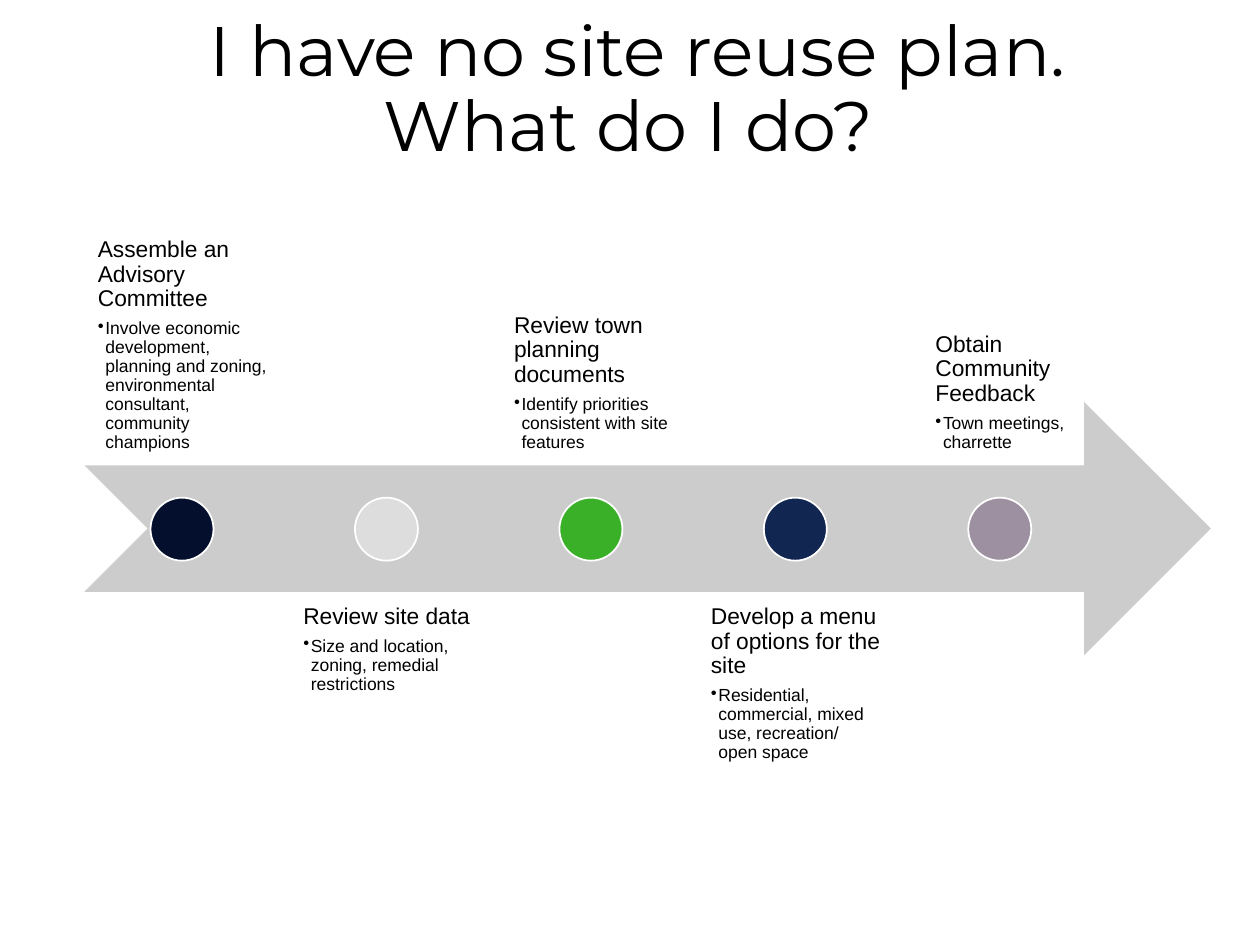
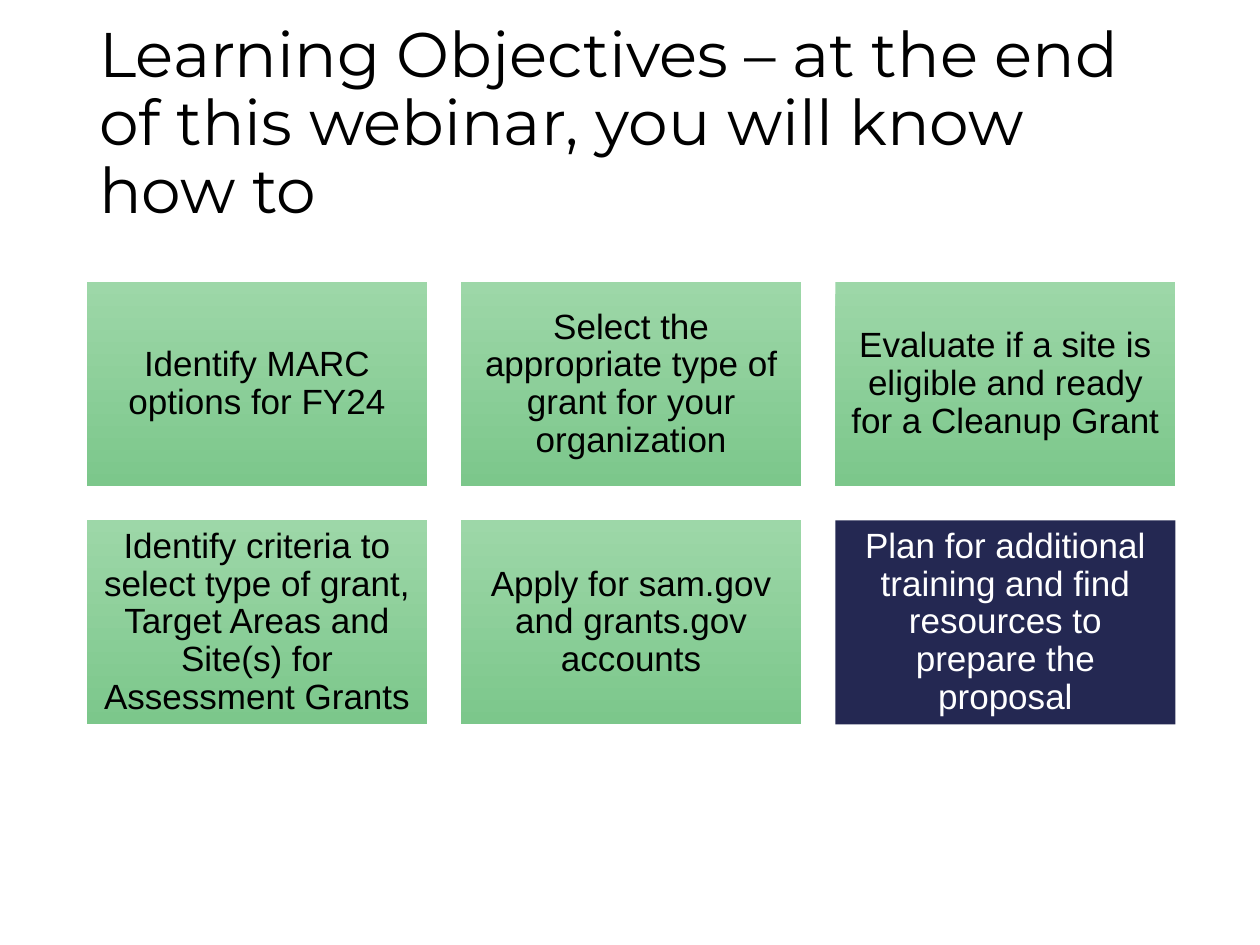
from lxml import etree
from pptx import Presentation
from pptx.dml.color import RGBColor
from pptx.enum.shapes import MSO_SHAPE
from pptx.enum.text import MSO_ANCHOR, PP_ALIGN
from pptx.oxml.ns import qn
from pptx.util import Inches, Pt

ARROW, DOT, CARD = MSO_SHAPE.NOTCHED_RIGHT_ARROW, MSO_SHAPE.OVAL, MSO_SHAPE.RECTANGLE
TOP, MIDDLE, BOTTOM = MSO_ANCHOR.TOP, MSO_ANCHOR.MIDDLE, MSO_ANCHOR.BOTTOM
LEFT, CENTER = PP_ALIGN.LEFT, PP_ALIGN.CENTER

# Shared style
TITLE_FONT, BODY_FONT = "Montserrat", "Arial"
BLACK, WHITE, GREY, NAVY = "000000", "FFFFFF", "CCCCCD", "242852"
GREEN_TOP, GREEN_BOTTOM = "9DD7A8", "7CC78B"
LINE_SPACING = 0.9
TITLE_WIDTH, TITLE_HEIGHT = 8.62, 1.45

# Timeline: heading, detail, dot colour; texts alternate above and below
STEPS = [
    ("Assemble an Advisory Committee",
     "Involve economic development, planning and zoning, environmental "
     "consultant, community champions", "040F2D"),
    ("Review site data",
     "Size and location, zoning, remedial restrictions", "DDDDDD"),
    ("Review town planning documents",
     "Identify priorities consistent with site features", "3AB028"),
    ("Develop a menu of options for the site",
     "Residential, commercial, mixed use, recreation/ open space", "122652"),
    ("Obtain Community Feedback", "Town meetings, charrette", "9D90A0"),
]
STEP_LEFT, STEP_WIDTH, STEP_HEIGHT = 0.67, 1.55, 2.01
STEP_PITCH = 6.49 / (len(STEPS) - 1)
ABOVE_TOP, BELOW_TOP = 1.68, 4.7
DOT_SIZE, DOT_TOP = 0.5, 3.95

# Objective cards, filled row by row; the last one stands out
OBJECTIVES = [
    "Identify MARC options for FY24",
    "Select the appropriate type of grant for your organization",
    "Evaluate if a site is eligible and ready for a Cleanup Grant",
    "Identify criteria to select type of grant, Target Areas and Site(s) "
    "for Assessment Grants",
    "Apply for sam.gov and grants.gov accounts",
    "Plan for additional training and find resources to prepare the proposal",
]
CARD_LEFT, CARD_TOP, CARD_WIDTH, CARD_HEIGHT = 0.69, 2.24, 2.7, 1.62
CARD_GAP, CARD_COLUMNS = 0.27, 3


def rgb(hex_color):
    return RGBColor.from_string(hex_color)


def set_frame(frame, anchor, inset=None):
    frame.word_wrap = True
    frame.vertical_anchor = anchor
    if inset is not None:
        frame.margin_left = frame.margin_right = Inches(inset)
        frame.margin_top = frame.margin_bottom = Inches(inset)


def write(para, text, size, color=BLACK, font=BODY_FONT, align=LEFT, after=0):
    para.alignment = align
    para.line_spacing = LINE_SPACING
    para.space_after = Pt(after)
    span = para.add_run()
    span.text = text
    span.font.name = font
    span.font.size = Pt(size)
    span.font.color.rgb = rgb(color)


def add_bullet(para, indent):
    properties = para._p.get_or_add_pPr()
    properties.set("marL", str(Inches(indent)))
    properties.set("indent", str(-Inches(indent)))
    etree.SubElement(properties, qn("a:buChar")).set("char", "•")


def add_text_box(page, left, top, width, height):
    return page.shapes.add_textbox(
        Inches(left), Inches(top), Inches(width), Inches(height))


def add_title(page, text, left, top, size, align):
    frame = add_text_box(page, left, top, TITLE_WIDTH, TITLE_HEIGHT).text_frame
    set_frame(frame, MIDDLE)
    write(frame.paragraphs[0], text, size, font=TITLE_FONT, align=align)


def add_shape(page, kind, left, top, width, height, fill=None, outline=None):
    shape = page.shapes.add_shape(
        kind, Inches(left), Inches(top), Inches(width), Inches(height))
    shape.shadow.inherit = False
    if fill:
        shape.fill.solid()
        shape.fill.fore_color.rgb = rgb(fill)
    if outline:
        shape.line.color.rgb = rgb(outline)
        shape.line.width = Pt(1)
    else:
        shape.line.fill.background()
    return shape


def add_step(page, index, heading, detail, dot_color):
    left = STEP_LEFT + index * STEP_PITCH
    above = index % 2 == 0
    box = add_text_box(page, left, ABOVE_TOP if above else BELOW_TOP,
                       STEP_WIDTH, STEP_HEIGHT)
    frame = box.text_frame
    set_frame(frame, BOTTOM if above else TOP, 0.1)
    # Centre the left-aligned text block within its box
    frame._txBody.bodyPr.set("anchorCtr", "1")
    write(frame.paragraphs[0], heading, 13, after=4.55)
    para = frame.add_paragraph()
    add_bullet(para, 0.06)
    write(para, detail, 10, after=1.5)
    add_shape(page, DOT, left + (STEP_WIDTH - DOT_SIZE) / 2, DOT_TOP,
              DOT_SIZE, DOT_SIZE, dot_color, WHITE)


def add_card(page, index, text, highlighted):
    row, column = divmod(index, CARD_COLUMNS)
    card = add_shape(page, CARD,
                     CARD_LEFT + column * (CARD_WIDTH + CARD_GAP),
                     CARD_TOP + row * (CARD_HEIGHT + CARD_GAP),
                     CARD_WIDTH, CARD_HEIGHT, NAVY if highlighted else None)
    if not highlighted:
        card.fill.gradient()
        card.fill.gradient_angle = 270
        for stop, color in zip(card.fill.gradient_stops, (GREEN_TOP, GREEN_BOTTOM)):
            stop.color.rgb = rgb(color)
    set_frame(card.text_frame, MIDDLE, 0.08)
    write(card.text_frame.paragraphs[0], text, 20,
          WHITE if highlighted else BLACK, align=CENTER)


def build_timeline(page):
    add_title(page, "I have no site reuse plan. What do I do? ", 0.75, 0, 40, CENTER)
    add_shape(page, ARROW, STEP_LEFT, 3.19, 8.94, 2.01, GREY)
    for index, step in enumerate(STEPS):
        add_step(page, index, *step)


def build_objectives(page):
    add_title(page, "Learning Objectives – at the end of this webinar, "
              "you will know how to", CARD_LEFT, 0.27, 36, LEFT)
    for index, text in enumerate(OBJECTIVES):
        add_card(page, index, text, index == len(OBJECTIVES) - 1)


def main():
    deck = Presentation()
    deck.slide_width, deck.slide_height = Inches(10), Inches(7.5)
    blank = deck.slide_layouts[6]
    for build in (build_timeline, build_objectives):
        build(deck.slides.add_slide(blank))
    deck.save("out.pptx")


if __name__ == "__main__":
    main()
